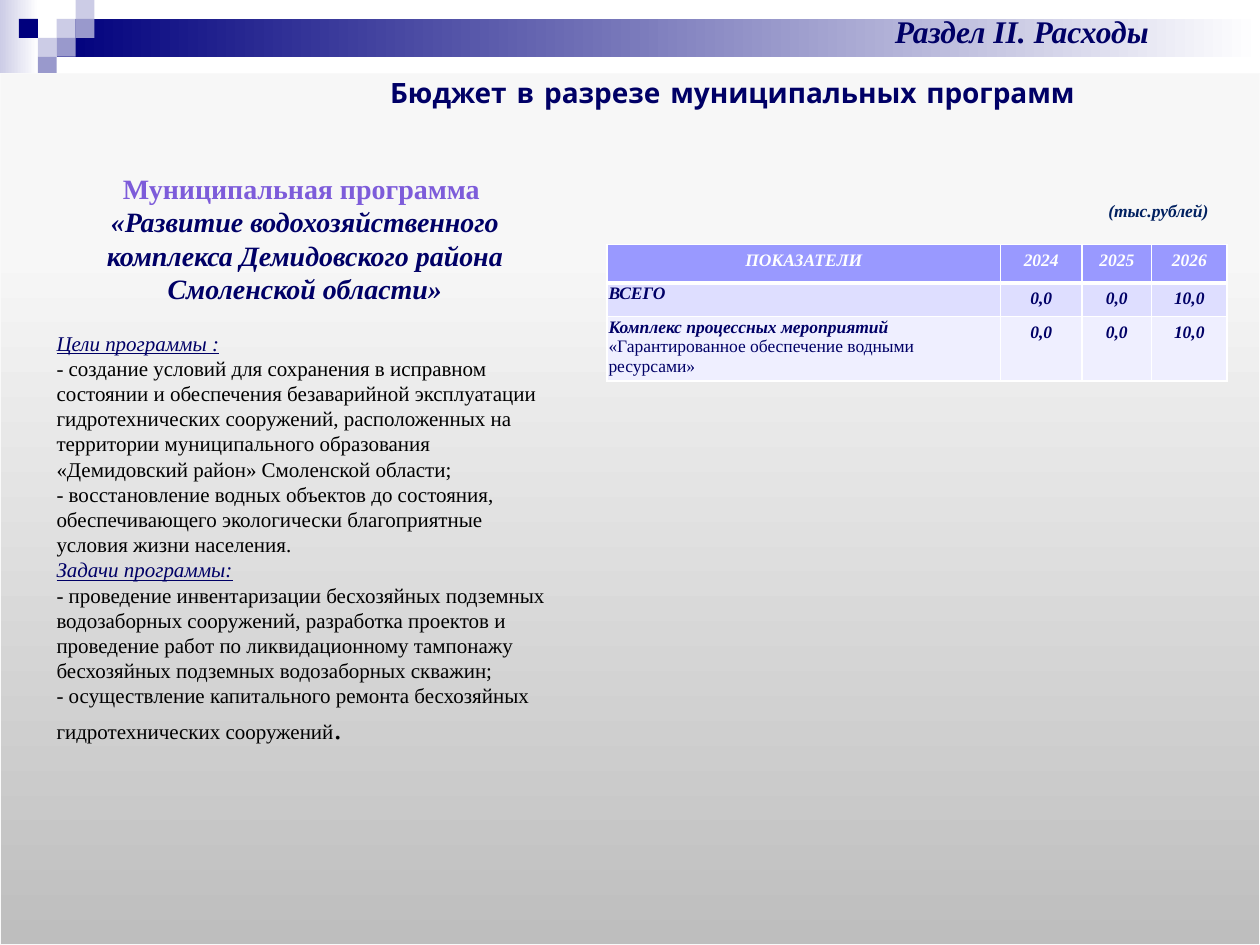
import pptx
import pptx.dml.color
import pptx.enum.shapes
import pptx.enum.text
import pptx.oxml
import pptx.oxml.ns
import pptx.util
from lxml import etree

Pt = pptx.util.Pt
SHAPE = pptx.enum.shapes.MSO_SHAPE
CENTER = pptx.enum.text.PP_ALIGN.CENTER
SERIF = "Times New Roman"
COLORS = {
    "navy": "00007D", "pale": "CCCCE6", "mid": "9999CC", "white": "FFFFFF",
    "text": "000066", "black": "000000", "violet": "7D5CDA", "unit": "002060",
    "gray": "BEBEBE", "light": "F7F7F7", "lightest": "F8F8F8", "edge": "F9F9F9",
    "head": "9999FF", "total": "DEDEFF", "detail": "EFEFFF",
}
GOALS = [
    "- создание условий для сохранения в исправном состоянии и обеспечения безаварийной "
    "эксплуатации гидротехнических сооружений, расположенных на территории муниципального "
    "образования «Демидовский район» Смоленской области;",
    "- восстановление водных объектов до состояния, обеспечивающего экологически "
    "благоприятные условия жизни населения.",
]
TASKS = [
    "- проведение инвентаризации бесхозяйных подземных водозаборных сооружений, разработка "
    "проектов и проведение работ по ликвидационному тампонажу бесхозяйных подземных "
    "водозаборных скважин;",
    "- осуществление капитального ремонта бесхозяйных гидротехнических сооружений",
]
ROWS = [
    ["ПОКАЗАТЕЛИ", "2024", "2025", "2026"],
    ["ВСЕГО", "0,0", "0,0", "10,0"],
    ["Комплекс процессных мероприятий ", "0,0", "0,0", "10,0"],
]


def rgb(name):
    return pptx.dml.color.RGBColor.from_string(COLORS[name])


def set_gradient(sp, stops, angle):
    """Fill with (percent, colour) stops; the angle runs clockwise."""
    sp.fill.gradient()
    grad = sp._element.spPr.find(pptx.oxml.ns.qn("a:gradFill"))
    gs = "".join(f'<a:gs pos="{pos * 1000}"><a:srgbClr val="{COLORS[c]}"/></a:gs>'
                 for pos, c in stops)
    grad.getparent().replace(grad, pptx.oxml.parse_xml(
        f'<a:gradFill {pptx.oxml.ns.nsdecls("a")} rotWithShape="1"><a:gsLst>{gs}</a:gsLst>'
        f'<a:lin ang="{angle * 60000}" scaled="0"/></a:gradFill>'))


def add_box(s, x, y, w, h, color=None, kind=SHAPE.RECTANGLE):
    sp = s.shapes.add_shape(kind, Pt(x), Pt(y), Pt(w), Pt(h))
    sp.shadow.inherit = False
    sp.line.fill.background()
    if color:
        sp.fill.solid()
        sp.fill.fore_color.rgb = rgb(color)
    return sp


def add_run(p, text, size, color, bold=False, italic=False, underline=False, font=SERIF):
    r = p.add_run()
    r.text = text
    r.font.name, r.font.size = font, Pt(size)
    r.font.color.rgb = rgb(color)
    r.font.bold, r.font.italic, r.font.underline = bold, italic, underline


def add_text_frame(s, x, y, w, h, wrap=True):
    tf = s.shapes.add_textbox(Pt(x), Pt(y), Pt(w), Pt(h)).text_frame
    tf.word_wrap = wrap
    return tf


def add_header_band(s, x, y, w):
    unit = 10.8  # side of one mosaic square
    fade = add_box(s, x, y, 22, 42)
    set_gradient(fade, [(0, "pale"), (100, "white")], 0)
    bar = add_box(s, x + 3 * unit, y + unit, w - 3 * unit, 2 * unit)
    set_gradient(bar, [(0, "navy"), (100, "white")], 0)
    squares = [(3, 1, "pale"), (4, 0, "pale"), (4, 1, "mid"), (2, 2, "pale"),
               (1, 1, "navy"), (3, 2, "mid"), (2, 3, "mid")]
    for col, row, color in squares:
        add_box(s, x + col * unit, y + row * unit, unit, unit, color)


def add_panel(s, x, y, w, h):
    sp = add_box(s, x, y, w, h, kind=SHAPE.FLOWCHART_PROCESS)
    set_gradient(sp, [(0, "gray"), (80, "light"), (100, "lightest")], 270)
    sp.line.color.rgb = rgb("edge")
    sp.line.width = Pt(0.75)


def add_title(s, x, y, w, h, text, size, **style):
    p = add_text_frame(s, x, y, w, h).paragraphs[0]
    p.alignment = CENTER
    add_run(p, text, size, "text", bold=True, **style)


def add_program(s, x, y, w, h):
    tf = add_text_frame(s, x, y, w, h)
    p = tf.paragraphs[0]
    p.alignment = CENTER
    add_run(p, "Муниципальная программа ", 16, "violet", bold=True)
    p = tf.add_paragraph()
    p.alignment = CENTER
    p.space_after = Pt(14)
    add_run(p, "«Развитие водохозяйственного комплекса Демидовского района "
               "Смоленской области»", 16, "text", bold=True, italic=True)
    for heading, items in [("Цели программы :", GOALS), ("Задачи программы:", TASKS)]:
        add_run(tf.add_paragraph(), heading, 12, "text", italic=True, underline=True)
        for item in items:
            p = tf.add_paragraph()
            add_run(p, item, 12, "black")
    add_run(p, ".", 18, "black")


def set_borders(cell, bottom):
    tcPr = cell._tc.get_or_add_tcPr()
    widths = {"lnL": 1, "lnR": 1, "lnT": 1, "lnB": bottom}
    for i, (tag, width) in enumerate(widths.items()):
        ln = etree.Element(pptx.oxml.ns.qn("a:" + tag), w=str(Pt(width)))
        fill = etree.SubElement(ln, pptx.oxml.ns.qn("a:solidFill"))
        etree.SubElement(fill, pptx.oxml.ns.qn("a:srgbClr"), val=COLORS["white"])
        tcPr.insert(i, ln)


def add_budget_table(s, x, y, w, h):
    # Unit label above the right end of the table
    p = add_text_frame(s, x + w - 75, y - 28.8, 73.4, 19.4, wrap=False).paragraphs[0]
    add_run(p, "(тыс.рублей)", 10, "unit", bold=True, italic=True)

    table = s.shapes.add_table(len(ROWS), 4, Pt(x), Pt(y), Pt(w), Pt(h)).table
    year_widths = [46.8, 39.6, 43.2]
    for col, width in zip(table.columns, [w - sum(year_widths)] + year_widths):
        col.width = Pt(width)
    heights = [22, 19.2]
    for row, height in zip(table.rows, heights + [h - sum(heights)]):
        row.height = Pt(height)

    for i, (values, fill) in enumerate(zip(ROWS, ["head", "total", "detail"])):
        for j, value in enumerate(values):
            cell = table.cell(i, j)
            cell.fill.solid()
            cell.fill.fore_color.rgb = rgb(fill)
            set_borders(cell, bottom=1 if i else 3)
            p = cell.text_frame.paragraphs[0]
            add_run(p, value, 10, "text" if i else "white", bold=True, italic=True)
            if i and j == 0:
                cell.margin_left = cell.margin_top = cell.margin_right = Pt(0.75)
                cell.margin_bottom = 0
            else:
                p.alignment = CENTER
    add_run(table.cell(2, 0).text_frame.paragraphs[0],
            "«Гарантированное обеспечение водными ресурсами»", 10, "text")


def main():
    prs = pptx.Presentation()
    prs.slide_width, prs.slide_height = Pt(720), Pt(540)
    s = prs.slides.add_slide(prs.slide_layouts[6])
    add_header_band(s, 0, 0, 720)
    add_panel(s, 0, 42, 720, 498)
    add_program(s, 25.2, 94.3, 298, 339)
    add_title(s, 450.7, 3.6, 266.4, 28.8, "Раздел II. Расходы", 18, italic=True)
    add_title(s, 127.4, 39.6, 582.5, 26.6, "Бюджет в разрезе муниципальных программ", 16,
              font="Comic Neue")
    add_budget_table(s, 347, 139.7, 354.2, 77.8)
    prs.save("out.pptx")


if __name__ == "__main__":
    main()
